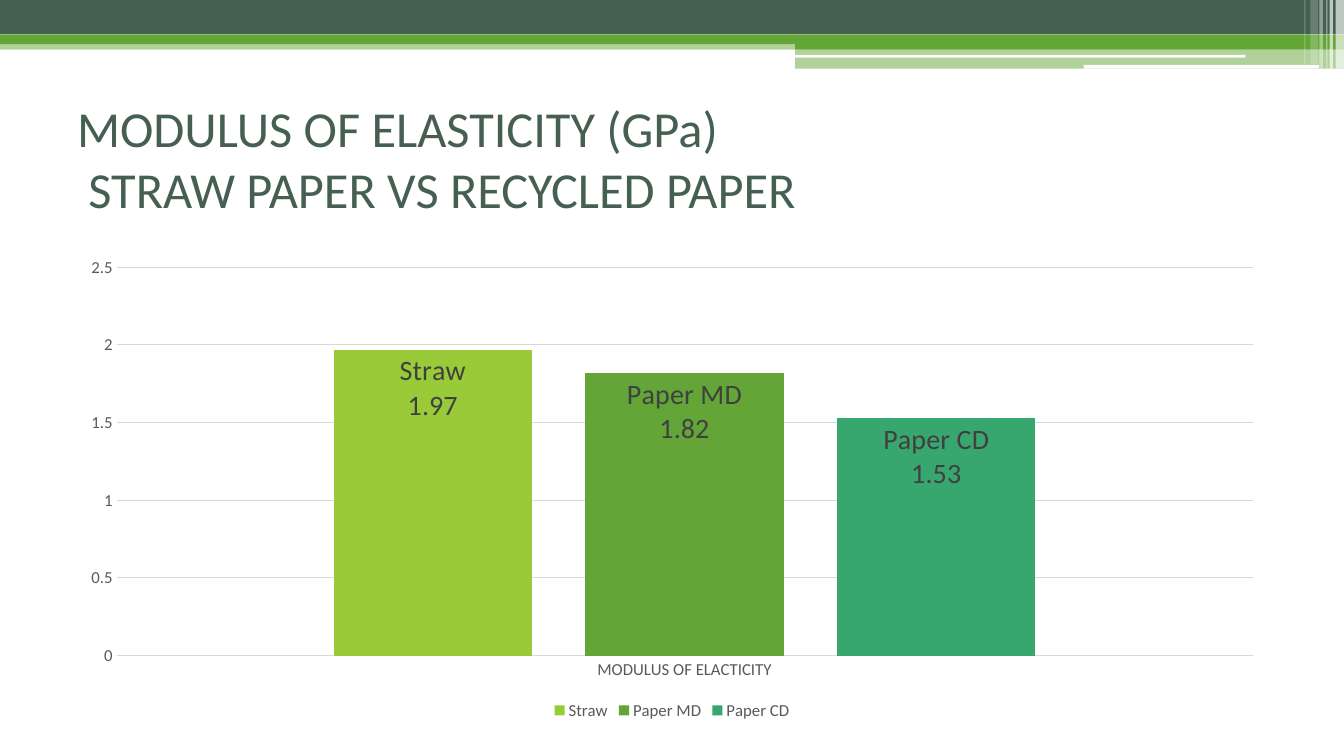
from dataclasses import dataclass

from lxml import etree
from pptx import Presentation
from pptx import util as u
from pptx.chart import data as chart_data
from pptx.dml.color import RGBColor
from pptx.enum import chart as charts, shapes, text
from pptx.oxml import ns


@dataclass(frozen=True)
class Theme:
    font: str = "Calibri"
    dark: str = "455F51"
    green: str = "63A537"
    lime: str = "99CB38"
    teal: str = "37A76F"
    white: str = "FFFFFF"
    axis_text: str = "595959"
    label_text: str = "404040"
    grid: str = "D9D9D9"
    title_size: int = 36
    label_size: int = 20
    axis_size: int = 12


theme = Theme()


def set_font(font, size, color):
    font.name = theme.font
    font.size = u.Pt(size)
    font.color.rgb = RGBColor.from_string(color)


def add_bar(slide, kind, box, color, opacity):
    shape = slide.shapes.add_shape(kind, *[u.Pt(length) for length in box])
    shape.shadow.inherit = False
    shape.line.fill.background()
    shape.fill.solid()
    shape.fill.fore_color.rgb = RGBColor.from_string(color)
    if opacity < 100:
        color_element = shape.fill._xPr.find(".//" + ns.qn("a:srgbClr"))
        alpha = etree.SubElement(color_element, ns.qn("a:alpha"))
        alpha.set("val", str(opacity * 1000))


presentation = Presentation()
presentation.slide_width = u.Pt(960)
presentation.slide_height = u.Pt(540)
slide = presentation.slides.add_slide(presentation.slide_layouts[6])

# Header bands: left, top, width, height, colour, opacity
bands = [
    (0, 28.8, 960, 6.6, theme.green, 50),
    (0, 0, 960, 24.5, theme.dark, 100),
    (0, 24.5, 960, 7, theme.green, 100),
    (568, 28.2, 392, 7, theme.green, 100),
    (568, 34.8, 392, 14.2, theme.green, 50),
]
for *box, color, opacity in bands:
    add_bar(slide, shapes.MSO_SHAPE.RECTANGLE, box, color, opacity)

# White rules inside the bands
for box in [(567.5, 39.2, 322, 2), (774, 46.3, 168, 2.7)]:
    add_bar(slide, shapes.MSO_SHAPE.ROUNDED_RECTANGLE, box, theme.white, 100)

# Translucent stripes in the right corner: left, width, height, opacity
stripes = [
    (954, 6, 49, 65),
    (949.7, 2.5, 49, 65),
    (947.5, 0.75, 49, 60),
    (942.5, 2.5, 49, 40),
    (936, 5.5, 46, 20),
    (931.7, 0.75, 46, 30),
]
for left, width, height, opacity in stripes:
    add_bar(slide, shapes.MSO_SHAPE.RECTANGLE, (left, 0, width, height),
            theme.white, opacity)

# Title
title = slide.shapes.add_textbox(u.Pt(48), u.Pt(65.8), u.Pt(864), u.Pt(94))
title.text_frame.word_wrap = True
title.text_frame.vertical_anchor = text.MSO_ANCHOR.MIDDLE
paragraph = title.text_frame.paragraphs[0]
for index, line in enumerate(["MODULUS OF ELASTICITY (GPa)",
                              " STRAW PAPER VS RECYCLED PAPER"]):
    if index:
        paragraph.add_line_break()
    run = paragraph.add_run()
    run.text = line
    set_font(run.font, theme.title_size, theme.dark)

# Chart
papers = [
    ("Straw", 1.97, theme.lime),
    ("Paper MD", 1.82, theme.green),
    ("Paper CD", 1.53, theme.teal),
]
elasticity = chart_data.CategoryChartData()
elasticity.categories = ["MODULUS OF ELACTICITY"]
for name, value, color in papers:
    elasticity.add_series(name, [value])
chart = slide.shapes.add_chart(
    charts.XL_CHART_TYPE.COLUMN_CLUSTERED,
    u.Pt(48), u.Pt(177), u.Pt(864), u.Pt(340.5), elasticity).chart
chart.has_title = False
set_font(chart.font, theme.axis_size, theme.axis_text)

# Columns and their labels
plot = chart.plots[0]
plot.gap_width = 219
plot.overlap = -27
plot.vary_by_categories = False
for series, (name, value, color) in zip(plot.series, papers):
    series.format.fill.solid()
    series.format.fill.fore_color.rgb = RGBColor.from_string(color)
    labels = series.data_labels
    labels.show_value = True
    labels.show_series_name = True
    labels.position = charts.XL_LABEL_POSITION.INSIDE_END
    set_font(labels.font, theme.label_size, theme.label_text)
    separator = etree.Element(ns.qn("c:separator"))
    separator.text = "\n"
    labels._element.find(ns.qn("c:showBubbleSize")).addnext(separator)

# Axes
for axis in (chart.category_axis, chart.value_axis):
    axis.major_tick_mark = charts.XL_TICK_MARK.NONE
    axis.minor_tick_mark = charts.XL_TICK_MARK.NONE
    set_font(axis.tick_labels.font, theme.axis_size, theme.axis_text)
value_axis = chart.value_axis
value_axis.minimum_scale = 0
value_axis.maximum_scale = 2.5
value_axis.major_unit = 0.5
value_axis.format.line.fill.background()
for line in (chart.category_axis.format.line,
             value_axis.major_gridlines.format.line):
    line.width = u.Pt(0.75)
    line.color.rgb = RGBColor.from_string(theme.grid)

# Legend
chart.has_legend = True
chart.legend.position = charts.XL_LEGEND_POSITION.BOTTOM
chart.legend.include_in_layout = False
set_font(chart.legend.font, theme.axis_size, theme.axis_text)

presentation.save("out.pptx")
